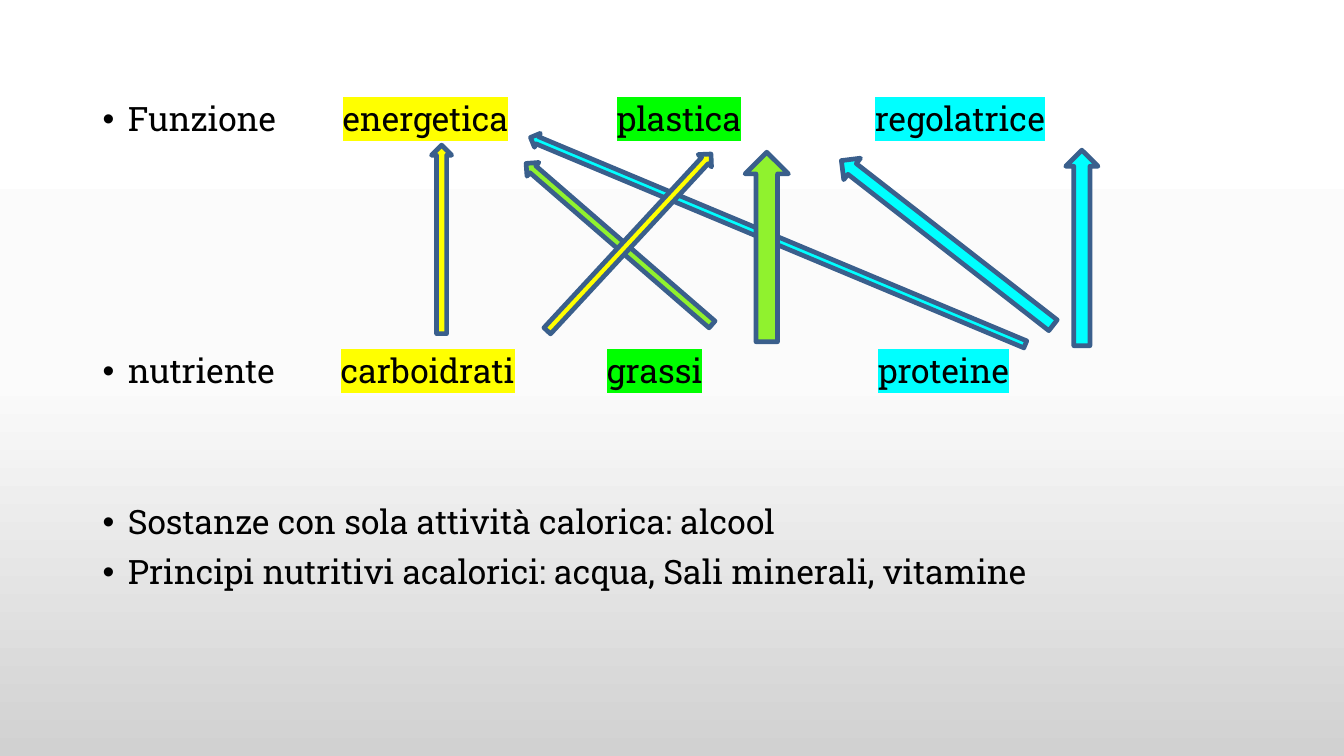
from lxml.etree import SubElement
from pptx import Presentation
from pptx.dml.color import RGBColor
from pptx.enum.shapes import MSO_SHAPE as Shape
from pptx.oxml.ns import qn
from pptx.util import Inches, Pt

COLORS = {
    "text": "000000", "outline": "3A5F8C", "lime": "90F22E",
    "yellow": "FFFF00", "green": "00FF00", "cyan": "00FFFF",
}
BACKGROUND = [(0, "FFFFFF"), (50, "FBFBFB"), (100, "D1D1D1")]

# Space before in points, tab stops in inches, then (text, highlight) pieces
BULLETS = [
    (10, (2.38, 4.11, 5.1, 6.5, 7.66), [
        ("Funzione\t", None), ("energetica\t", "yellow"), ("\t", None),
        ("plastica\t", "green"), ("\t", None), ("regolatrice", "cyan")]),
    (154, (2.36, 4.43, 5, 6.03, 7.69), [
        ("nutriente\t", None), ("carboidrati\t", "yellow"), ("\t", None),
        ("grassi\t", "green"), ("\t", None), ("proteine", "cyan")]),
    (82, (), [("Sostanze con sola attività calorica: alcool", None)]),
    (10, (), [("Principi nutritivi acalorici: acqua, Sali minerali, vitamine", None)]),
]

# Left, top, width, height in inches, rotation in degrees, fill
ARROWS = [
    (9.26, 1.08, 0.27, 2.66, 307.9, "cyan"),
    (10.57, 1.49, 0.32, 1.94, 0, "cyan"),
    (7.64, -0.27, 0.15, 5.32, 292.7, "cyan"),
    (7.39, 1.51, 0.43, 1.88, 0, "lime"),
    (6.05, 1.2, 0.18, 2.44, 310.9, "lime"),
    (4.28, 1.44, 0.2, 1.87, 0, "yellow"),
    (6.15, 1.21, 0.18, 2.39, 42.8, "yellow"),
]


def color(name):
    return RGBColor.from_string(COLORS[name])


class SlideBuilder:
    font_name = "Roboto Slab"
    font_size = Pt(24)
    outline_width = Pt(3.35)
    indent = Inches(0.25)

    def __init__(self, presentation):
        self.slide = presentation.slides.add_slide(presentation.slide_layouts[6])

    def background(self, stops):
        fill = self.slide.background.fill
        fill.gradient()
        fill.gradient_angle = 270
        stop_list = next(self.slide.element.iter(qn("a:gsLst")))
        for old_stop in list(stop_list):
            stop_list.remove(old_stop)
        for percent, value in stops:
            stop = SubElement(stop_list, qn("a:gs"), pos=str(percent * 1000))
            SubElement(stop, qn("a:srgbClr"), val=value)

    def bullet_list(self, left, top, width, height, bullets):
        box = self.slide.shapes.add_textbox(
            Inches(left), Inches(top), Inches(width), Inches(height))
        frame = box.text_frame
        frame.word_wrap = True
        for index, (space_before, tabs, pieces) in enumerate(bullets):
            paragraph = frame.add_paragraph() if index else frame.paragraphs[0]
            self.bullet(paragraph, tabs)
            paragraph.space_before = Pt(space_before)
            paragraph.line_spacing = 0.9
            paragraph.font.name = self.font_name
            paragraph.font.size = self.font_size
            paragraph.font.color.rgb = color("text")
            for text, highlight in pieces:
                self.run(paragraph, text, highlight)

    def bullet(self, paragraph, tabs):
        """Give the paragraph a hanging bullet and its tab stops."""
        properties = paragraph._p.get_or_add_pPr()
        properties.set("marL", str(self.indent))
        properties.set("indent", str(-self.indent))
        SubElement(properties, qn("a:buFont"), typeface="Arial")
        SubElement(properties, qn("a:buChar"), char="•")
        if tabs:
            tab_list = SubElement(properties, qn("a:tabLst"))
            for position in tabs:
                SubElement(tab_list, qn("a:tab"), pos=str(Inches(position)), algn="l")

    def run(self, paragraph, text, highlight):
        run = paragraph.add_run()
        run.text = text
        if highlight:
            mark = SubElement(run._r.get_or_add_rPr(), qn("a:highlight"))
            SubElement(mark, qn("a:srgbClr"), val=COLORS[highlight])

    def arrow(self, left, top, width, height, rotation, fill):
        shape = self.slide.shapes.add_shape(
            Shape.UP_ARROW, Inches(left), Inches(top), Inches(width), Inches(height))
        shape.rotation = rotation
        shape.shadow.inherit = False
        shape.fill.solid()
        shape.fill.fore_color.rgb = color(fill)
        shape.line.color.rgb = color("outline")
        shape.line.width = self.outline_width


def main():
    presentation = Presentation()
    presentation.slide_width = Inches(13.33)
    presentation.slide_height = Inches(7.5)
    builder = SlideBuilder(presentation)
    builder.background(BACKGROUND)
    builder.bullet_list(0.92, 0.97, 11.5, 6.37, BULLETS)
    for arrow in ARROWS:
        builder.arrow(*arrow)
    presentation.save("out.pptx")


if __name__ == "__main__":
    main()
